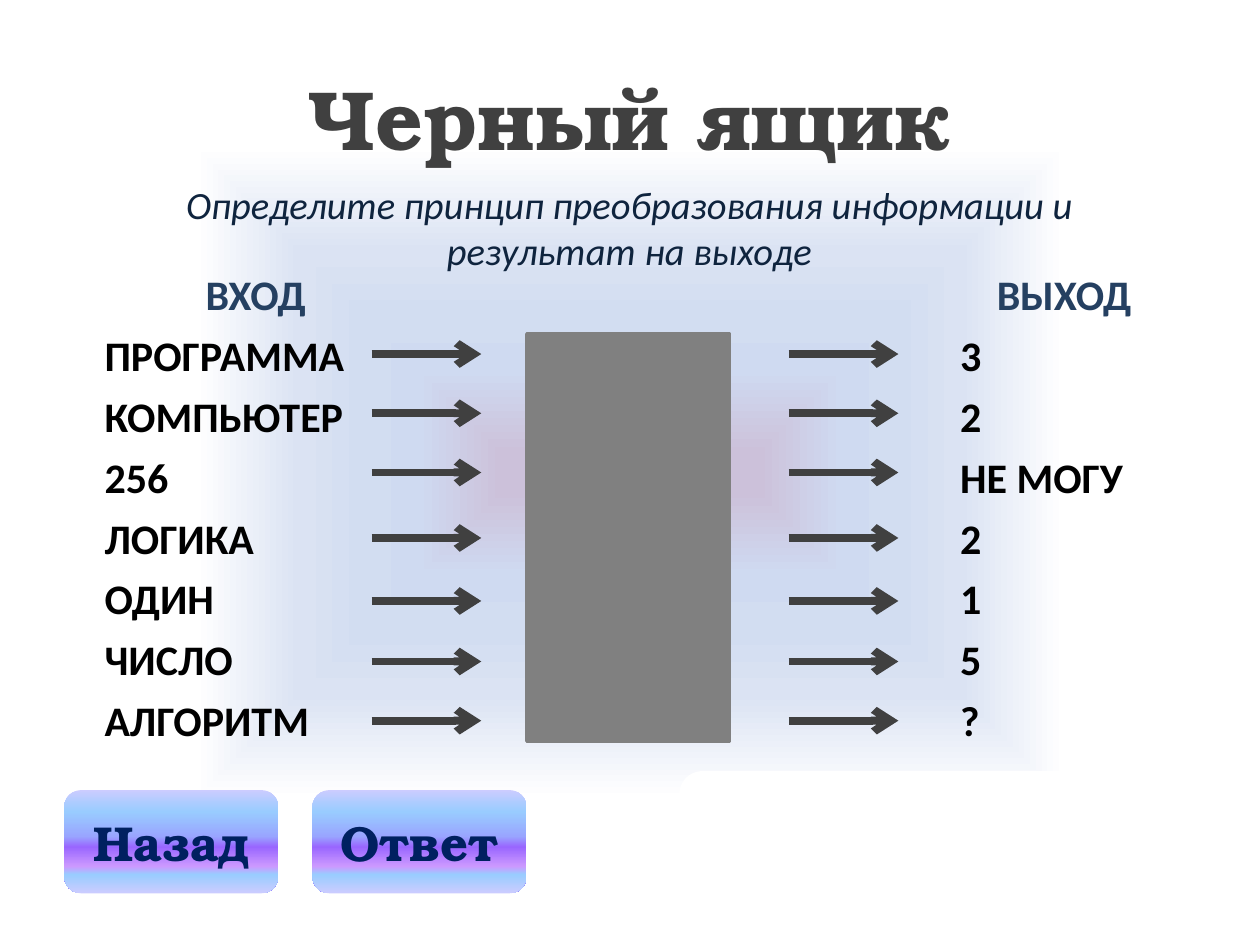
import pptx
import pptx.dml.color
import pptx.enum.shapes
import pptx.enum.text
import pptx.oxml
import pptx.oxml.ns
import pptx.util
from lxml import etree

Inches, Pt = pptx.util.Inches, pptx.util.Pt
qn = pptx.oxml.ns.qn
SHAPE = pptx.enum.shapes.MSO_SHAPE
ALIGN = pptx.enum.text.PP_ALIGN


def color(value):
    return pptx.dml.color.RGBColor.from_string(value)


class SlideBuilder:
    DISPLAY, BODY = "TeX Gyre Bonum", "Calibri"
    GRAY, NAVY, HEADING, BLACK = "404040", "002060", "254061", "000000"

    def __init__(self, slide):
        self.slide = slide

    def place(self, shape, left, top, width, height):
        shape.left, shape.top = Inches(left), Inches(top)
        shape.width, shape.height = Inches(width), Inches(height)

    def style(self, paragraph, size, font, ink, bold=True, italic=False, align=ALIGN.CENTER):
        paragraph.alignment = align
        paragraph.font.size = Pt(size)
        paragraph.font.name = font
        paragraph.font.bold = bold
        paragraph.font.italic = italic
        paragraph.font.color.rgb = color(ink)

    def gradient(self, fill, owner, stops, direction):
        """Fill the owner element with the given stops and direction XML."""
        fill.gradient()
        grad = next(owner.iter(qn("a:gradFill")))
        for child in list(grad):
            grad.remove(child)
        stop_list = etree.SubElement(grad, qn("a:gsLst"))
        for position, value in stops:
            stop = etree.SubElement(stop_list, qn("a:gs"), pos=str(position * 1000))
            etree.SubElement(stop, qn("a:srgbClr"), val=value)
        namespace = pptx.oxml.ns.nsdecls("a")
        grad.append(pptx.oxml.parse_xml(direction.format(namespace)))

    def background(self, stops):
        self.gradient(
            self.slide.background.fill, self.slide.element, stops,
            '<a:path {} path="shape"><a:fillToRect l="50000" t="50000" r="50000" b="50000"/></a:path>')

    def title(self, text, *box):
        heading = self.slide.shapes.title
        self.place(heading, *box)
        heading.text_frame.text = text
        self.style(heading.text_frame.paragraphs[0], 48, self.DISPLAY, self.GRAY)

    def task(self, text, *box):
        frame = self.slide.shapes.add_textbox(*map(Inches, box)).text_frame
        frame.word_wrap = True
        frame.text = text
        self.style(frame.paragraphs[0], 22, self.BODY, "0F243E", bold=False, italic=True)

    def column(self, index, heading, items, *box):
        holder = self.slide.placeholders[index]
        self.place(holder, *box)
        frame = holder.text_frame
        frame.auto_size = pptx.enum.text.MSO_AUTO_SIZE.NONE
        frame.text = "\n".join([heading, *items])
        for row, paragraph in enumerate(frame.paragraphs):
            if row == 0:
                self.style(paragraph, 24, self.BODY, self.HEADING)
            else:
                self.style(paragraph, 24, self.BODY, self.BLACK, align=ALIGN.LEFT)
            paragraph.space_before = Pt(6)
            properties = paragraph._p.get_or_add_pPr()
            properties.set("marL", "0")
            properties.set("indent", "0")
            bullet = etree.Element(qn("a:buNone"))
            properties.find(qn("a:defRPr")).addprevious(bullet)

    def block(self, kind, fill, *box, line=None):
        shape = self.slide.shapes.add_shape(kind, *map(Inches, box))
        shape.shadow.inherit = False
        if fill:
            shape.fill.solid()
            shape.fill.fore_color.rgb = color(fill)
        if line:
            shape.line.color.rgb = color(line)
            shape.line.width = Pt(2)
        else:
            shape.line.fill.background()
        return shape

    def button(self, text, stops, *box):
        shape = self.block(SHAPE.ROUNDED_RECTANGLE, None, *box)
        self.gradient(shape.fill, shape.element, stops, '<a:lin {} ang="5400000" scaled="1"/>')
        frame = shape.text_frame
        frame.vertical_anchor = pptx.enum.text.MSO_ANCHOR.MIDDLE
        frame.word_wrap = False
        frame.text = text
        self.style(frame.paragraphs[0], 28, self.DISPLAY, self.NAVY)

    def arrow(self, left, y, length):
        arrow = self.slide.shapes.add_connector(
            pptx.enum.shapes.MSO_CONNECTOR.STRAIGHT,
            Inches(left), Inches(y), Inches(left + length), Inches(y))
        arrow.line.color.rgb = color(self.GRAY)
        arrow.line.width = Pt(4.5)
        etree.SubElement(arrow.line._get_or_add_ln(), qn("a:tailEnd"), type="arrow")
        etree.SubElement(arrow.element.spPr, qn("a:effectLst"))


def main():
    deck = pptx.Presentation()
    deck.slide_width, deck.slide_height = Inches(10), Inches(7.5)
    two_content = deck.slide_layouts[3]
    page = SlideBuilder(deck.slides.add_slide(two_content))

    # Background and headings
    page.background([(4, "CCC1DA"), (22, "CFDAF1"), (33, "D2DDF1"),
                     (47, "DBE3F3"), (69, "FFFFFF")])
    page.title("Черный ящик", 0.5, 0.3, 9, 1.25)
    page.task("Определите принцип преобразования информации и результат на выходе",
              0.98, 1.39, 8.03, 0.84)

    # Inputs and outputs
    pairs = [("ПРОГРАММА", "3"), ("КОМПЬЮТЕР", "2"), ("256", "НЕ МОГУ"),
             ("ЛОГИКА", "2"), ("ОДИН", "1"), ("ЧИСЛО", "5"), ("АЛГОРИТМ", "?")]
    inputs, outputs = zip(*pairs)
    page.column(1, "ВХОД", inputs, 0.73, 2.08, 2.6, 4.41)
    page.column(2, "ВЫХОД", outputs, 7.52, 2.08, 1.85, 3.92)

    # The black box with arrows on both sides
    page.block(SHAPE.RECTANGLE, "808080", 4.18, 2.65, 1.61, 3.23, line="808080")
    for y in (2.81, 3.28, 3.75, 4.27, 4.77, 5.25, 5.72):
        for left in (2.95, 6.26):
            page.arrow(left, y, 0.87)

    # Buttons and the white cover beside them
    shine = [(0, "CCCCFF"), (15, "A7CCFF"), (21, "99CCFF"), (45, "99A5FF"),
             (55, "9966FF"), (74, "CC99FF"), (82, "99CCFF"), (100, "CCCCFF")]
    for left, label in ((0.51, "Назад"), (2.48, "Ответ")):
        page.button(label, shine, left, 6.27, 1.7, 0.82)
    page.block(SHAPE.ROUNDED_RECTANGLE, "FFFFFF", 5.39, 6.12, 3.78, 1.11)

    deck.save("out.pptx")


if __name__ == "__main__":
    main()
